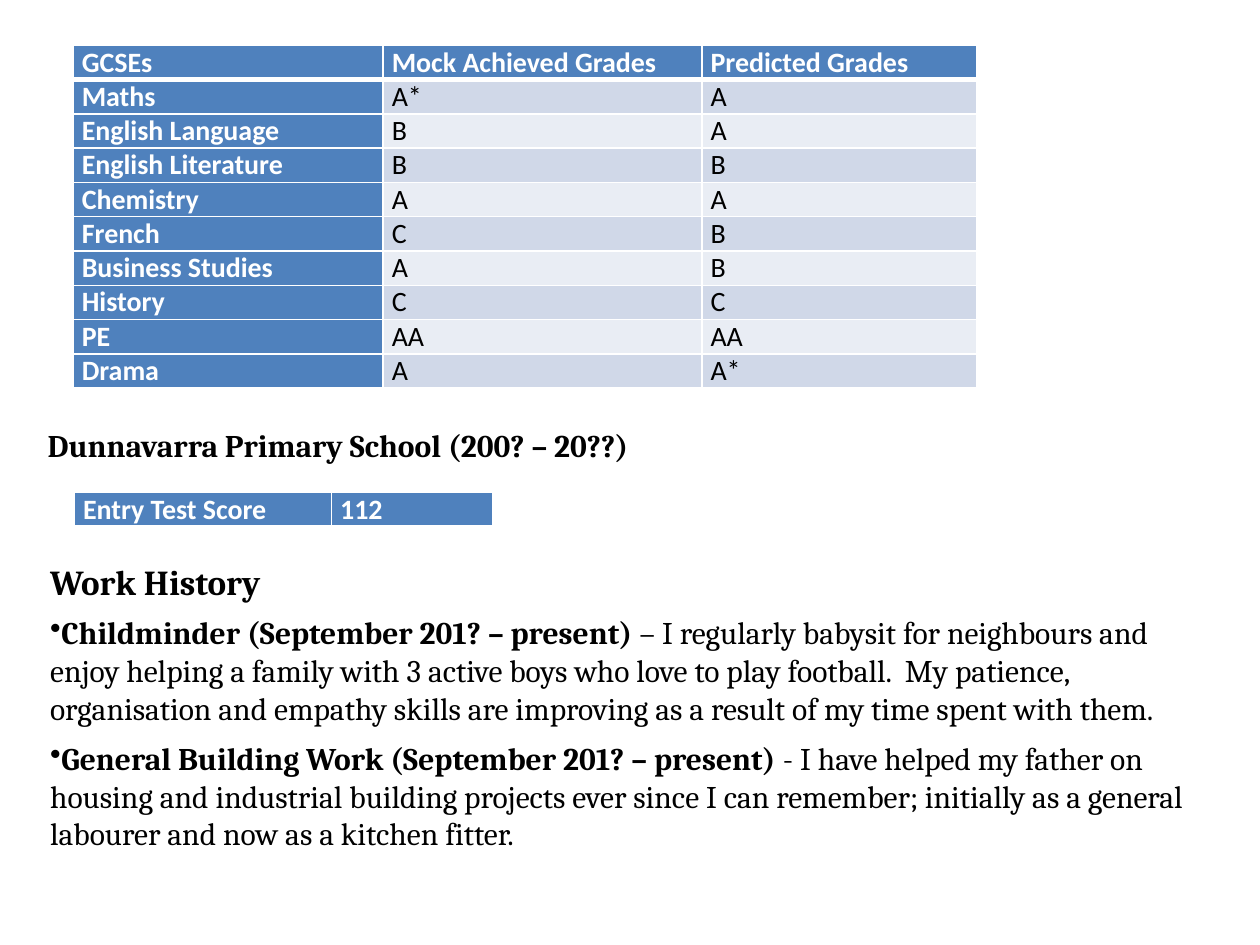
from lxml import etree
from pptx import Presentation
from pptx.dml.color import RGBColor
from pptx.oxml.ns import qn
from pptx.util import Inches, Pt

COLORS = {
    "header": "4F81BD",
    "band_dark": "D0D8E8",
    "band_light": "E9EDF4",
    "white": "FFFFFF",
    "black": "000000",
}
ROW_HEIGHT = 0.27

GRADES = [
    ("GCSEs", "Mock Achieved Grades", "Predicted Grades"),
    ("Maths", "A*", "A"),
    ("English Language", "B", "A"),
    ("English Literature", "B", "B"),
    ("Chemistry", "A", "A"),
    ("French", "C", "B"),
    ("Business Studies", "A", "B"),
    ("History", "C", "C"),
    ("PE", "AA", "AA"),
    ("Drama", "A", "A*"),
]
TEST_SCORE = [("Entry Test Score", "112")]

# Each paragraph: size, space before, bulleted, [(text, bold), ...]
SCHOOL = [(18, 0, False, [("Dunnavarra Primary School (200? – 20??)", True)])]
WORK_HISTORY = [
    (20, 0, False, [("Work History", True)]),
    (18, 6, True, [
        ("Childminder (September 201? – present)", True),
        (" – I regularly babysit for neighbours and enjoy helping a family with "
         "3 active boys who love to play football.  My patience, organisation and "
         "empathy skills are improving as a result of my time spent with them.", False),
    ]),
    (18, 7, True, [
        ("General Building Work (September 201? – present)", True),
        (" - I have helped my father on housing and industrial building projects "
         "ever since I can remember; initially as a general labourer and now as a "
         "kitchen fitter.", False),
    ]),
]


def style_span(span, font, size, color, bold):
    span.font.name = font
    span.font.size = Pt(size)
    span.font.color.rgb = RGBColor.from_string(COLORS[color])
    span.font.bold = bold


def add_border(cell, side, width):
    """Draw a white border on one side (L, R, T or B); call before filling the cell."""
    properties = cell._tc.get_or_add_tcPr()
    line = etree.SubElement(properties, qn(f"a:ln{side}"), w=str(Pt(width)))
    fill = etree.SubElement(line, qn("a:solidFill"))
    etree.SubElement(fill, qn("a:srgbClr"), val=COLORS["white"])


deck = Presentation()
deck.slide_width = Inches(10)
deck.slide_height = Inches(7.5)
page = deck.slides.add_slide(deck.slide_layouts[6])

# Tables: the first row and first column are headers, the rest is banded
for left, top, widths, rows in [
    (0.58, 0.36, (2.46, 2.53, 2.18), GRADES),
    (0.59, 3.91, (2.04, 1.28), TEST_SCORE),
]:
    table = page.shapes.add_table(
        len(rows), len(widths), Inches(left), Inches(top),
        Inches(sum(widths)), Inches(ROW_HEIGHT * len(rows)),
    ).table
    for column, width in zip(table.columns, widths):
        column.width = Inches(width)
    for row_index, row in enumerate(rows):
        table.rows[row_index].height = Inches(ROW_HEIGHT)
        for column_index, text in enumerate(row):
            cell = table.cell(row_index, column_index)
            cell.margin_left = cell.margin_right = Inches(0.07)
            cell.margin_top = cell.margin_bottom = 0
            is_header = row_index == 0 or column_index == 0
            for side in "LRTB":
                below_header = (side == "B" and row_index == 0) or (side == "T" and row_index == 1)
                add_border(cell, side, 3 if below_header else 1)
            band = "band_dark" if row_index % 2 else "band_light"
            cell.fill.solid()
            cell.fill.fore_color.rgb = RGBColor.from_string(
                COLORS["header" if is_header else band])
            cell.text_frame.text = text
            style_span(cell.text_frame.paragraphs[0].runs[0], "Calibri", 16,
                       "white" if is_header else "black", is_header)

# School heading and work history
for left, top, width, height, paragraphs in [
    (0.28, 3.33, 5.83, 0.54, SCHOOL),
    (0.3, 4.4, 9.27, 2.74, WORK_HISTORY),
]:
    box = page.shapes.add_textbox(Inches(left), Inches(top), Inches(width), Inches(height))
    frame = box.text_frame
    frame.word_wrap = True
    for index, (size, space, bulleted, spans) in enumerate(paragraphs):
        para = frame.add_paragraph() if index else frame.paragraphs[0]
        para.space_before = Pt(space)
        if bulleted:
            etree.SubElement(para._p.get_or_add_pPr(), qn("a:buChar"), char="•")
        for text, bold in spans:
            span = para.add_run()
            span.text = text
            style_span(span, "Cambria", size, "black", bold)

deck.save("out.pptx")
